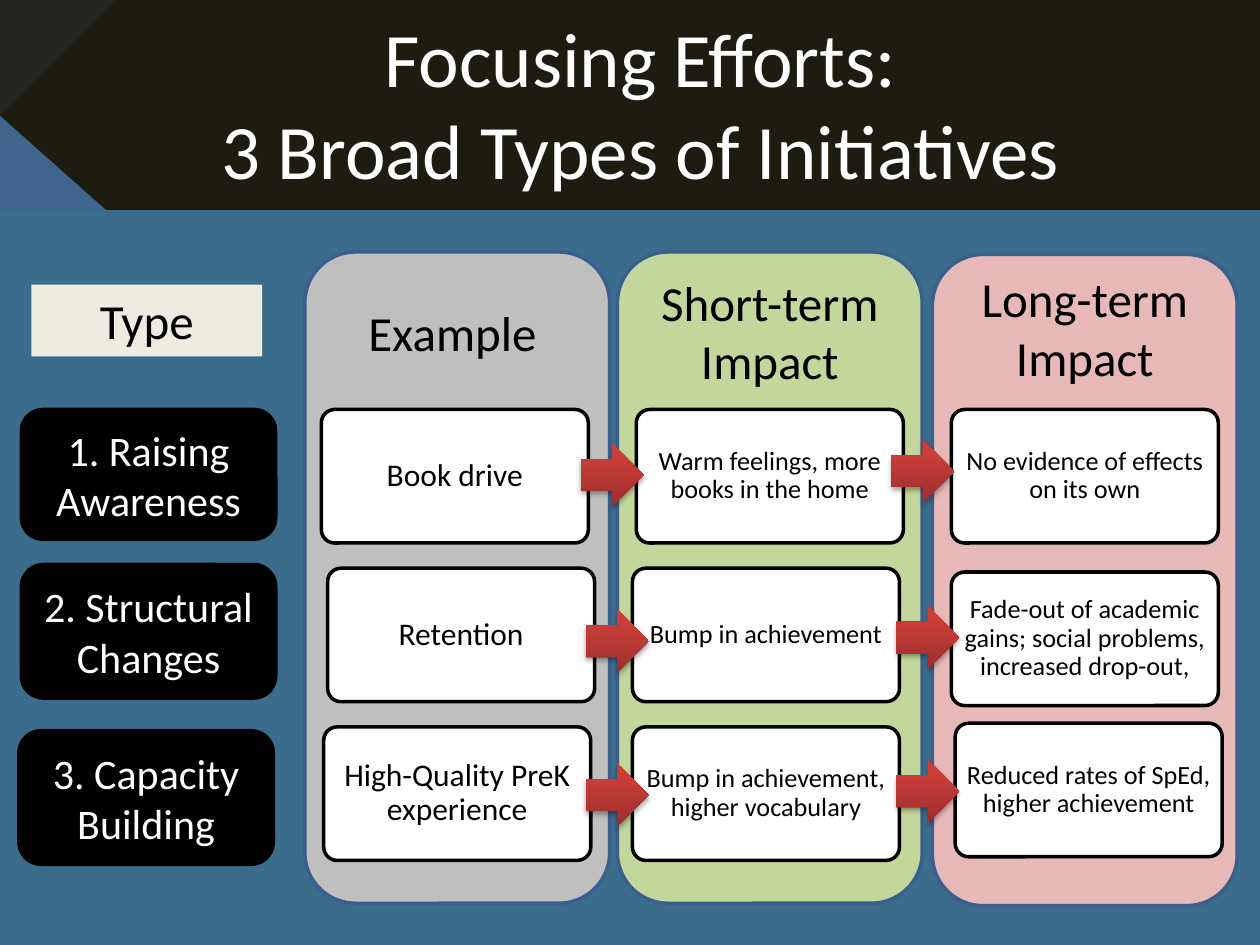
from lxml import etree
from pptx import Presentation
from pptx.dml.color import RGBColor
from pptx.enum.shapes import MSO_SHAPE
from pptx.enum.text import MSO_ANCHOR, PP_ALIGN
from pptx.oxml.ns import qn
from pptx.util import Pt

RECT, ROUNDED = MSO_SHAPE.RECTANGLE, MSO_SHAPE.ROUNDED_RECTANGLE
TRIANGLE, ARROW = MSO_SHAPE.RIGHT_TRIANGLE, MSO_SHAPE.RIGHT_ARROW
TOP, MIDDLE, CENTER = MSO_ANCHOR.TOP, MSO_ANCHOR.MIDDLE, PP_ALIGN.CENTER
COLORS = {
    "page": "3C6C8C", "band": "1E1C11", "blue": "4F81BD", "charcoal": "262626",
    "gray": "BFBFBF", "green": "C3D69B", "pink": "E6B9B8", "edge": "3A5F8C",
    "white": "FFFFFF", "black": "000000", "cream": "EEECE1",
    "arrow_low": "9C2F2D", "arrow_high": "CB3E3A",
}
CARD_SIZE = (152.6, 76.3)
ARROW_SIZE = 36
COLUMNS = [
    {"box": (174.2, 144, 174.2, 372.2), "fill": "gray", "size": 18,
     "header": ("Example", 11.6, 25.2, 145.4, 41),
     "cards": [("Book drive", 9.4, 90), ("Retention", 13, 180.7),
               ("High-Quality PreK experience", 10.8, 271.4)]},
    {"box": (352.8, 144, 174.2, 372.2), "fill": "green", "size": 15,
     "header": ("Short-term Impact", 0, 7.9, 174.2, 75),
     "cards": [("Warm feelings, more books in the home", 10.8, 90),
               ("Bump in achievement", 8.6, 180.7),
               ("Bump in achievement, higher vocabulary", 8.6, 271.4)]},
    {"box": (532.8, 145.4, 174.2, 372.2), "fill": "pink", "size": 15,
     "header": ("Long-term Impact", 0, 4.4, 174.2, 75),
     "cards": [("No evidence of effects on its own", 10.8, 88.6),
               ("Fade-out of academic gains; social problems, increased drop-out,",
                10.8, 181.5),
               ("Reduced rates of SpEd, higher achievement", 13, 267.9)]},
]
TYPES = [("1. Raising Awareness", 1.4, 72, 74.2),
         ("2. Structural Changes", 1.4, 160.6, 76.3),
         ("3. Capacity Building", 0, 255.6, 76.3)]
ARROWS = [(0, 2.1), (2.9, 97.2), (2.9, 185)]


def color(name):
    """Return the named palette colour."""
    return RGBColor.from_string(COLORS[name])


def set_values(target, values):
    """Set each named attribute of the target."""
    for name, value in values.items():
        setattr(target, name, value)


def add_box(page, kind, box, fill, line=None):
    """Add a flat preset shape with a solid fill and an optional outline."""
    shape = page.shapes.add_shape(kind, *map(Pt, box))
    shape.shadow.inherit = False
    shape.fill.solid()
    shape.fill.fore_color.rgb = color(fill)
    if line:
        shape.line.color.rgb = color(line)
        shape.line.width = Pt(2)
    else:
        shape.line.fill.background()
    return shape


def write(shape, text, size, ink="black", spacing=1, **frame_values):
    """Write one centred paragraph into a shape."""
    frame = shape.text_frame
    set_values(frame, {"word_wrap": True, "vertical_anchor": MIDDLE, **frame_values})
    para = frame.paragraphs[0]
    para.text = text
    set_values(para, {"alignment": CENTER, "line_spacing": spacing})
    for span in para.runs:
        set_values(span.font, {"name": "Calibri", "size": Pt(size)})
        span.font.color.rgb = color(ink)


def add_alpha(parent, percent):
    """Give the colour element under the parent an opacity."""
    paint = next(parent.iter(qn("a:srgbClr")))
    etree.SubElement(paint, qn("a:alpha"), val=str(percent * 1000))


def draw_banner(page, box):
    """Draw the dark band, its corner triangles and the title."""
    left, top, width, height = box
    add_box(page, RECT, box, "band")
    corner = 66.2
    lower = add_box(page, TRIANGLE, (left, top + corner, 60.5, height - corner), "blue")
    upper = add_box(page, TRIANGLE, (left, top, corner, corner), "charcoal")
    upper.rotation = 90
    for triangle in (lower, upper):
        add_alpha(triangle.fill._xPr, 72)
    title = page.shapes.title
    set_values(title, {"left": Pt(left + 48.2), "top": Pt(top + 5.8),
                       "width": Pt(635.8), "height": Pt(105.8)})
    write(title, "Focusing Efforts:\v3 Broad Types of Initiatives", 44, "white")
    page.shapes._spTree.append(title._element)


def draw_types(page, box):
    """Draw the type heading and the three type labels."""
    left, top, width, _ = box
    heading = add_box(page, RECT, (left + 7.2, top + 0.7, 131.8, 41), "cream")
    write(heading, "Type", 28, vertical_anchor=TOP)
    for text, dx, dy, height in TYPES:
        label = add_box(page, ROUNDED, (left + dx, top + dy, width, height),
                        "black", "black")
        write(label, text, 24, "white")


def draw_column(page, box, fill, size, header, cards):
    """Draw a coloured column with its header and cards."""
    left, top = box[:2]
    add_box(page, ROUNDED, box, fill, "edge")
    text, dx, dy, width, height = header
    heading = page.shapes.add_textbox(Pt(left + dx), Pt(top + dy), Pt(width), Pt(height))
    write(heading, text, 28, vertical_anchor=TOP)
    insets = {f"margin_{side}": Pt(3) for side in ("left", "right", "top", "bottom")}
    for text, dx, dy in cards:
        card = add_box(page, ROUNDED, (left + dx, top + dy, *CARD_SIZE), "white", "black")
        card.adjustments[0] = 0.1
        write(card, text, size, spacing=0.9, **insets)


def draw_arrow(page, box):
    """Draw a red gradient arrow with a soft shadow."""
    arrow = add_box(page, ARROW, box, "arrow_high")
    arrow.fill.gradient()
    arrow.fill.gradient_angle = 90
    for stop, name, position in zip(arrow.fill.gradient_stops,
                                    ("arrow_low", "arrow_high"), (0, 0.8)):
        stop.color.rgb = color(name)
        stop.position = position
    effects = arrow._element.spPr.find(qn("a:effectLst"))
    shadow = etree.SubElement(effects, qn("a:outerShdw"), blurRad=str(Pt(3.1)),
                              dist=str(Pt(1.8)), dir="5400000", rotWithShape="0")
    etree.SubElement(shadow, qn("a:srgbClr"), val=COLORS["black"])
    add_alpha(shadow, 35)


def draw_arrows(page, box):
    """Draw the arrows that link the cards across both column gaps."""
    left, top, width, _ = box
    step = width - ARROW_SIZE
    for column in range(2):
        for dx, dy in ARROWS:
            draw_arrow(page, (left + dx + column * step, top + dy - column * 2.1,
                              ARROW_SIZE, ARROW_SIZE))


def main():
    """Build the deck and save it."""
    deck = Presentation()
    set_values(deck, {"slide_width": Pt(720), "slide_height": Pt(540)})
    page = deck.slides.add_slide(deck.slide_layouts[5])
    page.background.fill.solid()
    page.background.fill.fore_color.rgb = color("page")
    draw_banner(page, (0, 0, 720, 120))
    for column in COLUMNS:
        draw_column(page, **column)
    draw_types(page, (10.8, 162, 145.4, 332))
    draw_arrows(page, (331.9, 251.3, 213.5, 221))
    deck.save("out.pptx")


if __name__ == "__main__":
    main()
